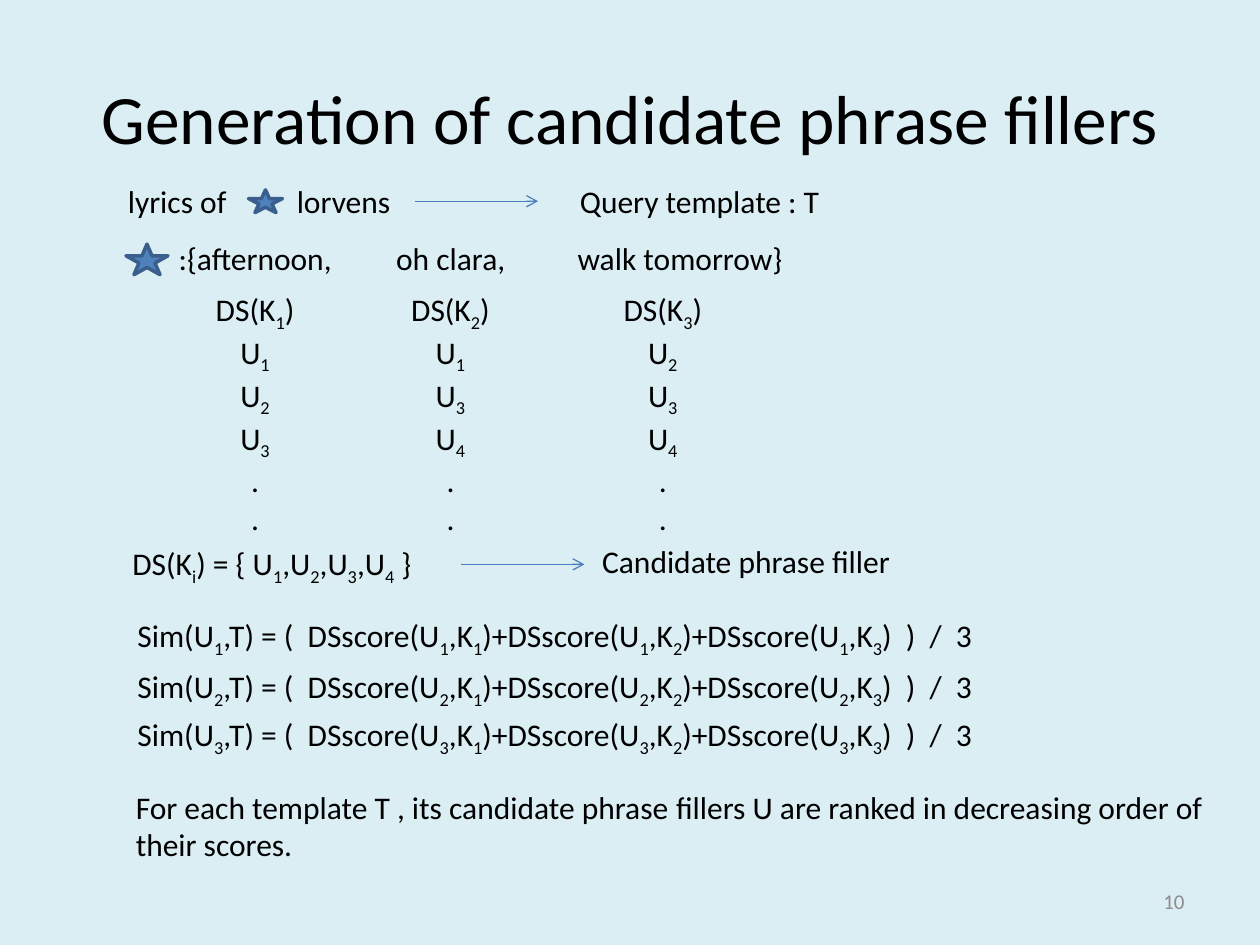
from dataclasses import dataclass

from lxml.etree import SubElement
from pptx import Presentation
from pptx.dml.color import RGBColor
from pptx.enum.shapes import MSO_CONNECTOR, MSO_SHAPE
from pptx.enum.text import MSO_ANCHOR, PP_ALIGN
from pptx.oxml.ns import qn
from pptx.slide import Slide
from pptx.util import Pt

BACKGROUND = RGBColor(0xDB, 0xEE, 0xF4)
INK = RGBColor(0, 0, 0)
PAGE_GREY = RGBColor(0x8C, 0x8C, 0x8C)
STAR_FILL = RGBColor(0x4F, 0x81, 0xBD)
STAR_EDGE = RGBColor(0x3A, 0x5F, 0x8C)
ARROW_BLUE = RGBColor(0x4B, 0x7E, 0xBC)
ROW_HEIGHT = 29


@dataclass(frozen=True)
class Passage:
    left: float
    top: float
    width: float
    lines: tuple[str, ...]
    height: float = ROW_HEIGHT
    align: PP_ALIGN = PP_ALIGN.LEFT
    anchor: MSO_ANCHOR = MSO_ANCHOR.TOP
    size: float = 18
    color: RGBColor = INK


@dataclass(frozen=True)
class Star:
    left: float
    top: float
    width: float
    height: float


@dataclass(frozen=True)
class Arrow:
    left: float
    y: float
    length: float = 70.5


def similarity(u: int) -> str:
    scores = "+".join(f"DSscore(U_{u},K_{k})" for k in (1, 2, 3))
    return f"Sim(U_{u},T) = (  {scores}  )  /  3"


def ranking(k: int, left: float, fillers: tuple[int, ...]) -> Passage:
    lines = (f"DS(K_{k})", *(f"U_{u}" for u in fillers), ".", ".")
    return Passage(left, 162, 61.5, lines, 160, PP_ALIGN.CENTER)


TITLE = Passage(36, 21.6, 648, ("Generation of candidate phrase fillers",), 90,
                PP_ALIGN.CENTER, MSO_ANCHOR.MIDDLE, 39.6)
PAGE_NUMBER = Passage(516, 500.5, 168, ("10",), 28.75,
                      PP_ALIGN.RIGHT, MSO_ANCHOR.MIDDLE, 12, PAGE_GREY)
QUERY = (
    Passage(66, 100.5, 80, ("lyrics of",)),
    Passage(162.5, 100.5, 74, ("lorvens",)),
    Passage(324.3, 100.5, 160, ("Query template : T",)),
)
KNOWN_FILLERS = (
    Passage(95, 133, 110, (":{afternoon,",)),
    Passage(219.3, 133, 90, ("oh clara,",)),
    Passage(323, 133, 138, ("walk tomorrow}",)),
)
RANKINGS = (
    ranking(1, 115, (1, 2, 3)),
    ranking(2, 226.7, (1, 3, 4)),
    ranking(3, 348, (2, 3, 4)),
)
CANDIDATES = (
    Passage(68.5, 307.5, 190, ("DS(K_i) = { U_1,U_2,U_3,U_4 }",)),
    Passage(337, 306.3, 185, ("Candidate phrase filler",)),
)
SIMILARITIES = tuple(
    Passage(71.5, top, 510, (similarity(u),))
    for u, top in enumerate((348.7, 377.7, 405.2), start=1)
)
CONCLUSION = Passage(70.5, 446.5, 629.5, (
    "For each template T , its candidate phrase ﬁllers U are ranked "
    "in decreasing order of their scores.",), 51)
STARS = (Star(142, 108.5, 19.5, 13), Star(72, 139.5, 24, 17.5))
ARROWS = (Arrow(237, 115), Arrow(263.5, 322.5))


def draw_passage(slide: Slide, passage: Passage) -> None:
    frame = slide.shapes.add_textbox(
        Pt(passage.left), Pt(passage.top), Pt(passage.width), Pt(passage.height)
    ).text_frame
    for name, value in {"word_wrap": True, "vertical_anchor": passage.anchor}.items():
        setattr(frame, name, value)
    font_format = {"name": "Calibri", "size": Pt(passage.size)}
    for index, line in enumerate(passage.lines):
        paragraph = frame.paragraphs[0] if index == 0 else frame.add_paragraph()
        paragraph.alignment = passage.align
        base, *indexed = line.split("_")
        pieces = [(base, False)]
        for piece in indexed:
            pieces += [(piece[0], True), (piece[1:], False)]
        for text, lowered in pieces:
            if not text:
                continue
            run = paragraph.add_run()
            run.text = text
            for name, value in font_format.items():
                setattr(run.font, name, value)
            run.font.color.rgb = passage.color
            if lowered:
                run.font._element.set("baseline", "-25000")


def draw_star(slide: Slide, star: Star) -> None:
    marker = slide.shapes.add_shape(
        MSO_SHAPE.STAR_5_POINT,
        Pt(star.left), Pt(star.top), Pt(star.width), Pt(star.height),
    )
    marker.shadow.inherit = False
    marker.fill.solid()
    marker.fill.fore_color.rgb = STAR_FILL
    marker.line.color.rgb = STAR_EDGE
    marker.line.width = Pt(2)


def draw_arrow(slide: Slide, arrow: Arrow) -> None:
    connector = slide.shapes.add_connector(
        MSO_CONNECTOR.STRAIGHT,
        Pt(arrow.left), Pt(arrow.y), Pt(arrow.left + arrow.length), Pt(arrow.y),
    )
    connector.line.color.rgb = ARROW_BLUE
    connector.line.width = Pt(0.75)
    SubElement(connector.line._get_or_add_ln(), qn("a:tailEnd"), type="arrow")
    SubElement(connector._element.spPr, qn("a:effectLst"))


def main() -> None:
    deck = Presentation()
    for name, value in {"slide_width": Pt(720), "slide_height": Pt(540)}.items():
        setattr(deck, name, value)
    slide = deck.slides.add_slide(deck.slide_layouts[6])
    slide.background.fill.solid()
    slide.background.fill.fore_color.rgb = BACKGROUND
    for passage in (TITLE, *QUERY, *KNOWN_FILLERS, *RANKINGS, *CANDIDATES,
                    *SIMILARITIES, CONCLUSION, PAGE_NUMBER):
        draw_passage(slide, passage)
    for star in STARS:
        draw_star(slide, star)
    for arrow in ARROWS:
        draw_arrow(slide, arrow)
    deck.save("out.pptx")


if __name__ == "__main__":
    main()
